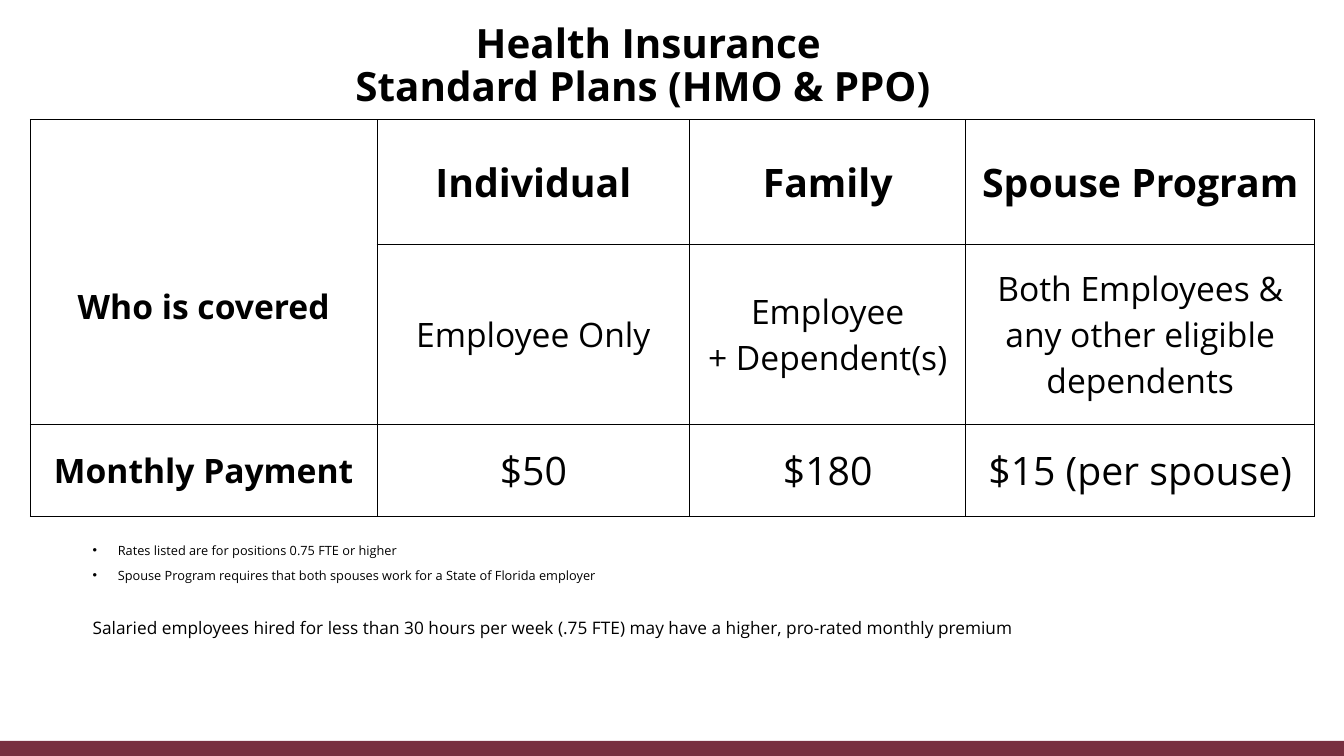
import dataclasses

import lxml.etree
import pptx
import pptx.dml.color
import pptx.enum.shapes
import pptx.enum.text
import pptx.oxml.ns
import pptx.util

Inches = pptx.util.Inches
Pt = pptx.util.Pt
ALIGN = pptx.enum.text.PP_ALIGN
ANCHOR = pptx.enum.text.MSO_ANCHOR


@dataclasses.dataclass(frozen=True)
class Theme:
    font: str = "Open Sans"
    ink: str = "000000"
    garnet: str = "782F40"
    title_size: float = 28.8
    large_size: float = 28
    medium_size: float = 24
    bullet_size: float = 9.1
    note_size: float = 12.3
    border_width: float = 0.8


THEME = Theme()
COLUMN_WIDTHS = (3.44, 3.1, 2.74, 3.46)
ROW_HEIGHTS = (1.24, 1.78, 0.91)
ROWS = (
    ("Who\u00a0is covered", "Individual", "Family", "Spouse\u00a0Program"),
    ("", "Employee\u00a0Only", "Employee +\u00a0Dependent(s)",
     "Both Employees & any other eligible dependents"),
    ("Monthly Payment", "$50", "$180", "$15 (per spouse)"),
)
BULLETS = (
    "Rates listed are for positions 0.75 FTE or higher",
    "Spouse Program requires that both spouses work for a State of Florida employer",
)
NOTE = ("Salaried employees hired for less than 30 hours per week (.75 FTE) "
        "may have a higher, pro-rated monthly premium")


def style_paragraph(paragraph, size, bold=False):
    for run in paragraph.runs:
        run.font.name = THEME.font
        run.font.size = Pt(size)
        run.font.bold = bold
        run.font.color.rgb = pptx.dml.color.RGBColor.from_string(THEME.ink)


def add_text_frame(slide, left, top, width, height):
    box = slide.shapes.add_textbox(*map(Inches, (left, top, width, height)))
    box.text_frame.word_wrap = True
    return box.text_frame


def add_footer_bar(slide, left, top, width, height):
    bar = slide.shapes.add_shape(pptx.enum.shapes.MSO_SHAPE.RECTANGLE,
                                 *map(Inches, (left, top, width, height)))
    bar.shadow.inherit = False
    bar.fill.solid()
    bar.fill.fore_color.rgb = pptx.dml.color.RGBColor.from_string(THEME.garnet)
    bar.line.fill.background()


def add_title(slide, left, top, width, height):
    frame = add_text_frame(slide, left, top, width, height)
    frame.vertical_anchor = ANCHOR.MIDDLE
    frame.text = "Health Insurance\vStandard Plans (HMO & PPO) "
    paragraph = frame.paragraphs[0]
    paragraph.alignment = ALIGN.CENTER
    paragraph.line_spacing = 0.9
    style_paragraph(paragraph, THEME.title_size, bold=True)


def set_borders(cell):
    qn = pptx.oxml.ns.qn
    properties = cell._tc.get_or_add_tcPr()
    for index, side in enumerate(("a:lnL", "a:lnR", "a:lnT", "a:lnB")):
        line = lxml.etree.Element(qn(side), w=str(Pt(THEME.border_width)))
        fill = lxml.etree.SubElement(line, qn("a:solidFill"))
        lxml.etree.SubElement(fill, qn("a:srgbClr"), val=THEME.ink)
        properties.insert(index, line)


def add_plan_table(slide, left, top, width, height):
    table = slide.shapes.add_table(len(ROWS), len(COLUMN_WIDTHS),
                                   *map(Inches, (left, top, width, height))).table
    table.first_row = table.horz_banding = False
    for column, share in zip(table.columns, COLUMN_WIDTHS):
        column.width = Inches(width * share / sum(COLUMN_WIDTHS))
    for row, share in zip(table.rows, ROW_HEIGHTS):
        row.height = Inches(height * share / sum(ROW_HEIGHTS))
    for row_index, texts in enumerate(ROWS):
        for column_index, text in enumerate(texts):
            cell = table.cell(row_index, column_index)
            is_label = column_index == 0
            is_medium = is_label or row_index == 1
            cell.text = text
            cell.vertical_anchor = ANCHOR.MIDDLE
            cell.fill.background()
            set_borders(cell)
            paragraph = cell.text_frame.paragraphs[0]
            paragraph.alignment = ALIGN.CENTER
            style_paragraph(paragraph,
                            THEME.medium_size if is_medium else THEME.large_size,
                            bold=is_label or row_index == 0)
    covered_label = table.cell(0, 0)
    covered_label.merge(table.cell(1, 0))
    covered_label.margin_top = Inches(0.74)


def add_bullet(paragraph, indent):
    properties = paragraph._p.get_or_add_pPr()
    properties.set("marL", str(Inches(indent)))
    properties.set("indent", str(-Inches(indent)))
    qn = pptx.oxml.ns.qn
    lxml.etree.SubElement(properties, qn("a:buFont"), typeface="Arial")
    lxml.etree.SubElement(properties, qn("a:buChar"), char="•")


def add_footnotes(slide, left, top, width, height):
    frame = add_text_frame(slide, left, top, width, height)
    frame.text = "\n".join((*BULLETS, NOTE))
    *bullets, note = frame.paragraphs
    for paragraph in bullets:
        add_bullet(paragraph, 0.25)
        style_paragraph(paragraph, THEME.bullet_size)
    style_paragraph(note, THEME.note_size)
    for paragraph, gap in zip(frame.paragraphs, (0, 10, 28.7)):
        paragraph.line_spacing = 0.7
        paragraph.space_before = Pt(gap)


def main():
    presentation = pptx.Presentation()
    presentation.slide_width = Inches(13.33)
    presentation.slide_height = Inches(7.5)
    slide = presentation.slides.add_slide(presentation.slide_layouts[6])
    add_footer_bar(slide, 0, 7.35, 13.33, 0.15)
    add_title(slide, 0.82, 0.4, 11.22, 0.53)
    add_footnotes(slide, 0.82, 5.38, 11.69, 1.08)
    add_plan_table(slide, 0.3, 1.19, 12.74, 3.93)
    presentation.save("out.pptx")


if __name__ == "__main__":
    main()
